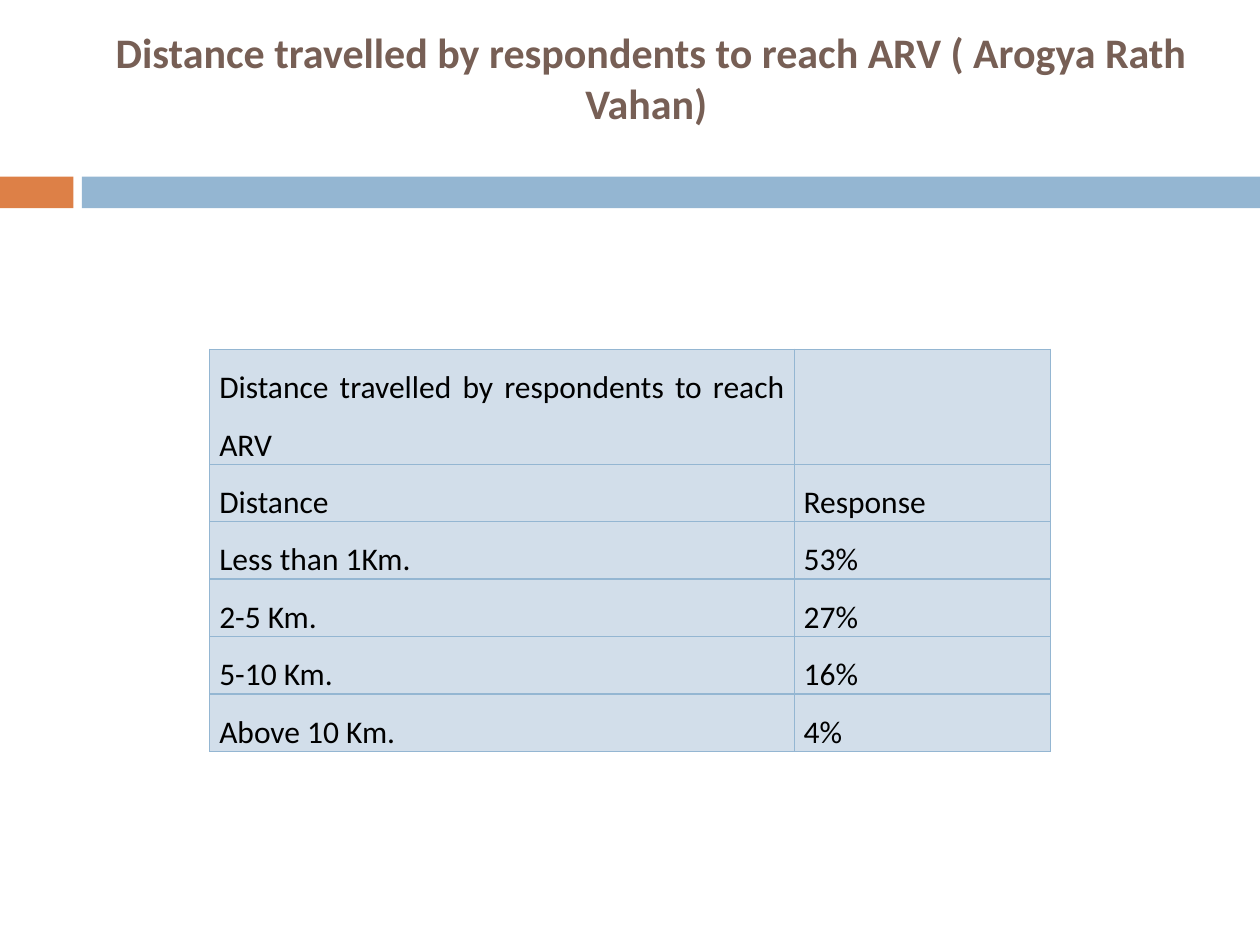
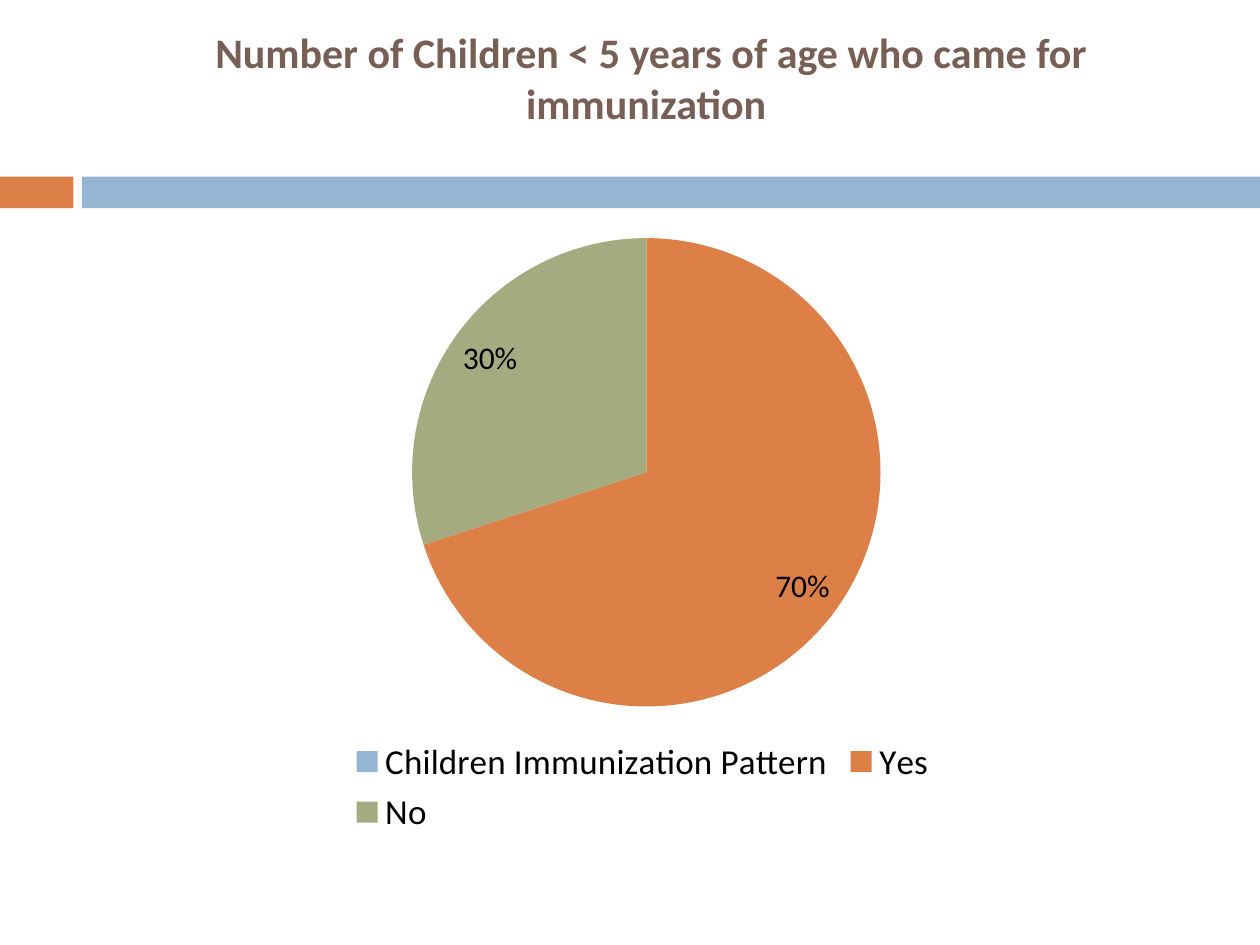
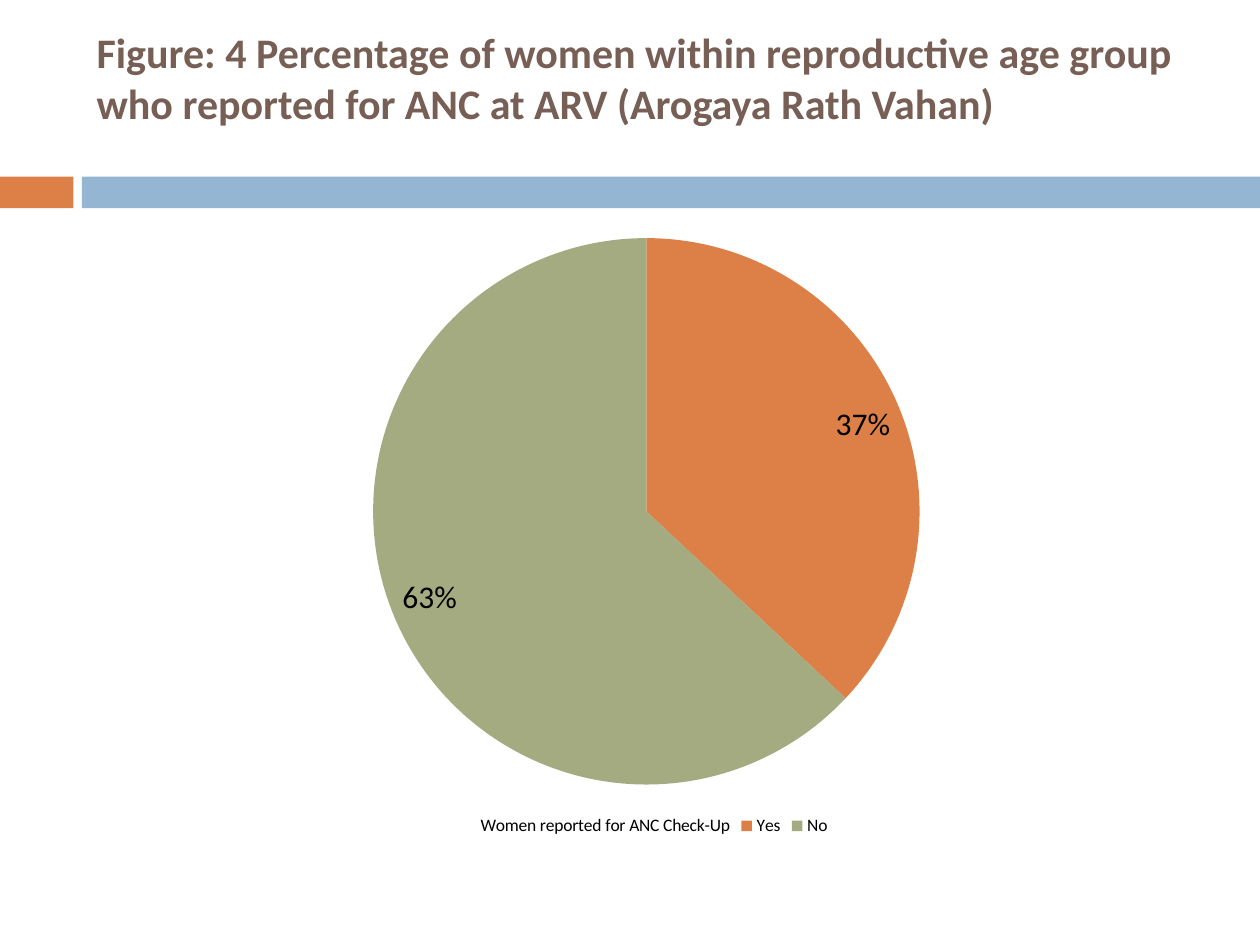
import collections

import pptx
import pptx.chart.data
import pptx.dml.color
import pptx.enum.chart
import pptx.enum.shapes
import pptx.enum.text
import pptx.oxml
import pptx.oxml.ns
import pptx.util

Cm, Pt = pptx.util.Cm, pptx.util.Pt
ALIGN = pptx.enum.text.PP_ALIGN
ANCHOR = pptx.enum.text.MSO_ANCHOR

FONT = "Calibri"
ORANGE, BLUE, GREEN = "DD8047", "94B6D2", "A5AB81"
PALE_BLUE, BROWN, BLACK = "D2DEEA", "775F55", "000000"

# Lengths in centimetres
Box = collections.namedtuple("Box", "left top width height")
SLIDE_WIDTH, SLIDE_HEIGHT = 25.4, 19.05
TITLE = Box(1.7, 0.64, 22.66, 2.74)
BAND = Box(0, 3.56, SLIDE_WIDTH, 0.64)
TABLE = Box(4.23, 7.04, 16.94, 8.11)
CHART = Box(1.7, 4.45, 22.66, 12.5)

DISTANCES = [
    ("Distance travelled by respondents to reach ARV", ""),
    ("Distance", "Response"),
    ("Less than 1Km.", "53%"),
    ("2-5 Km.", "27%"),
    ("5-10 Km.", "16%"),
    ("Above 10 Km.", "4%"),
]


def rgb(hex_color):
    return pptx.dml.color.RGBColor.from_string(hex_color)


def in_cm(box):
    return [Cm(length) for length in box]


def style_font(font, size, color=BLACK, bold=False):
    font.name, font.size, font.bold = FONT, Pt(size), bold
    font.color.rgb = rgb(color)


def add_band(slide, box):
    """Short orange block, a gap, then a blue bar to the box's right edge."""
    block_width, bar_start = 1.48, 1.65
    for start, width, color in [
        (0, block_width, ORANGE),
        (bar_start, box.width - bar_start, BLUE),
    ]:
        part = box._replace(left=box.left + start, width=width)
        band = slide.shapes.add_shape(
            pptx.enum.shapes.MSO_SHAPE.RECTANGLE, *in_cm(part))
        band.shadow.inherit = False
        band.fill.solid()
        band.fill.fore_color.rgb = rgb(color)
        band.line.fill.background()


def add_title(slide, box, text, align):
    frame = slide.shapes.add_textbox(*in_cm(box)).text_frame
    frame.word_wrap = True
    frame.vertical_anchor = ANCHOR.MIDDLE
    frame.margin_bottom = Cm(1.04)
    frame.text = text
    heading = frame.paragraphs[0]
    heading.alignment = align
    style_font(heading.runs[0].font, 24, BROWN, bold=True)


def add_base(prs, title, align=ALIGN.CENTER):
    """Add a slide with the shared band and title."""
    slide = prs.slides.add_slide(prs.slide_layouts[6])
    add_band(slide, BAND)
    add_title(slide, TITLE, title, align)
    return slide


def add_cell_borders(cell, color, width):
    properties = cell._tc.get_or_add_tcPr()
    for position, side in enumerate(("lnL", "lnR", "lnT", "lnB")):
        properties.insert(position, pptx.oxml.parse_xml(
            f'<a:{side} {pptx.oxml.ns.nsdecls("a")} w="{Pt(width)}">'
            f'<a:solidFill><a:srgbClr val="{color}"/></a:solidFill></a:{side}>'))


def fill_cell(cell, text):
    cell.fill.solid()
    cell.fill.fore_color.rgb = rgb(PALE_BLUE)
    add_cell_borders(cell, BLUE, 0.79)
    cell.margin_left = cell.margin_right = Cm(0.19)
    cell.margin_top = cell.margin_bottom = 0
    cell.vertical_anchor = ANCHOR.BOTTOM
    cell.text_frame.text = text
    line = cell.text_frame.paragraphs[0]
    line.alignment = ALIGN.JUSTIFY
    line.line_spacing = 1.5
    style_font(line.font, 18)
    for run in line.runs:
        style_font(run.font, 18)


def add_distance_table(slide, box, rows):
    """Table whose first row is two lines high and the others one."""
    table = slide.shapes.add_table(len(rows), 2, *in_cm(box)).table
    label_width = 11.78
    table.columns[0].width = Cm(label_width)
    table.columns[1].width = Cm(box.width - label_width)
    line_height = box.height / (len(rows) + 1)
    for r, texts in enumerate(rows):
        table.rows[r].height = Cm(line_height * (2 if r == 0 else 1))
        for c, text in enumerate(texts):
            fill_cell(table.cell(r, c), text)


def add_answer_pie(slide, box, question, answers, question_color, legend_size):
    """Pie of answers; the question is an empty first category in the legend."""
    data = pptx.chart.data.CategoryChartData()
    data.categories = [question, *answers]
    data.add_series("Series 1", [None, *answers.values()])
    chart = slide.shapes.add_chart(
        pptx.enum.chart.XL_CHART_TYPE.PIE, *in_cm(box), data).chart
    chart.has_title = False
    style_font(chart.font, 10)
    chart.has_legend = True
    chart.legend.position = pptx.enum.chart.XL_LEGEND_POSITION.BOTTOM
    chart.legend.include_in_layout = False
    style_font(chart.legend.font, legend_size)

    plot = chart.plots[0]
    plot.vary_by_categories = True
    series = plot.series[0]
    for index, color in enumerate((question_color, ORANGE, GREEN)):
        fill = series.points[index].format.fill
        if color:
            fill.solid()
            fill.fore_color.rgb = rgb(color)
        else:
            fill.background()

    labels = series.data_labels
    labels.show_percentage = True
    labels.show_value = False
    labels.number_format = "0%"
    labels.number_format_is_linked = False
    labels.position = pptx.enum.chart.XL_LABEL_POSITION.INSIDE_END
    style_font(labels.font, 18)
    labels._element.insert(0, pptx.oxml.parse_xml(
        f'<c:dLbl {pptx.oxml.ns.nsdecls("c")}>'
        '<c:idx val="0"/><c:delete val="1"/></c:dLbl>'))


def main():
    prs = pptx.Presentation()
    prs.slide_width, prs.slide_height = Cm(SLIDE_WIDTH), Cm(SLIDE_HEIGHT)

    distance = add_base(
        prs, " Distance travelled by respondents to reach ARV ( Arogya Rath Vahan)")
    add_distance_table(distance, TABLE, DISTANCES)

    immunization = add_base(
        prs, " Number of Children < 5 years of age who came for immunization")
    add_answer_pie(immunization, CHART, "Children Immunization Pattern",
                   {"Yes ": 70, "No": 30}, BLUE, legend_size=20)

    check_up = add_base(
        prs, "Figure: 4 Percentage of women within reproductive age group "
        "who reported for ANC at ARV (Arogaya Rath Vahan)", ALIGN.LEFT)
    add_answer_pie(check_up, CHART, "Women reported for ANC Check-Up",
                   {"Yes": 37, "No": 63}, None, legend_size=10)

    prs.save("out.pptx")


if __name__ == "__main__":
    main()
